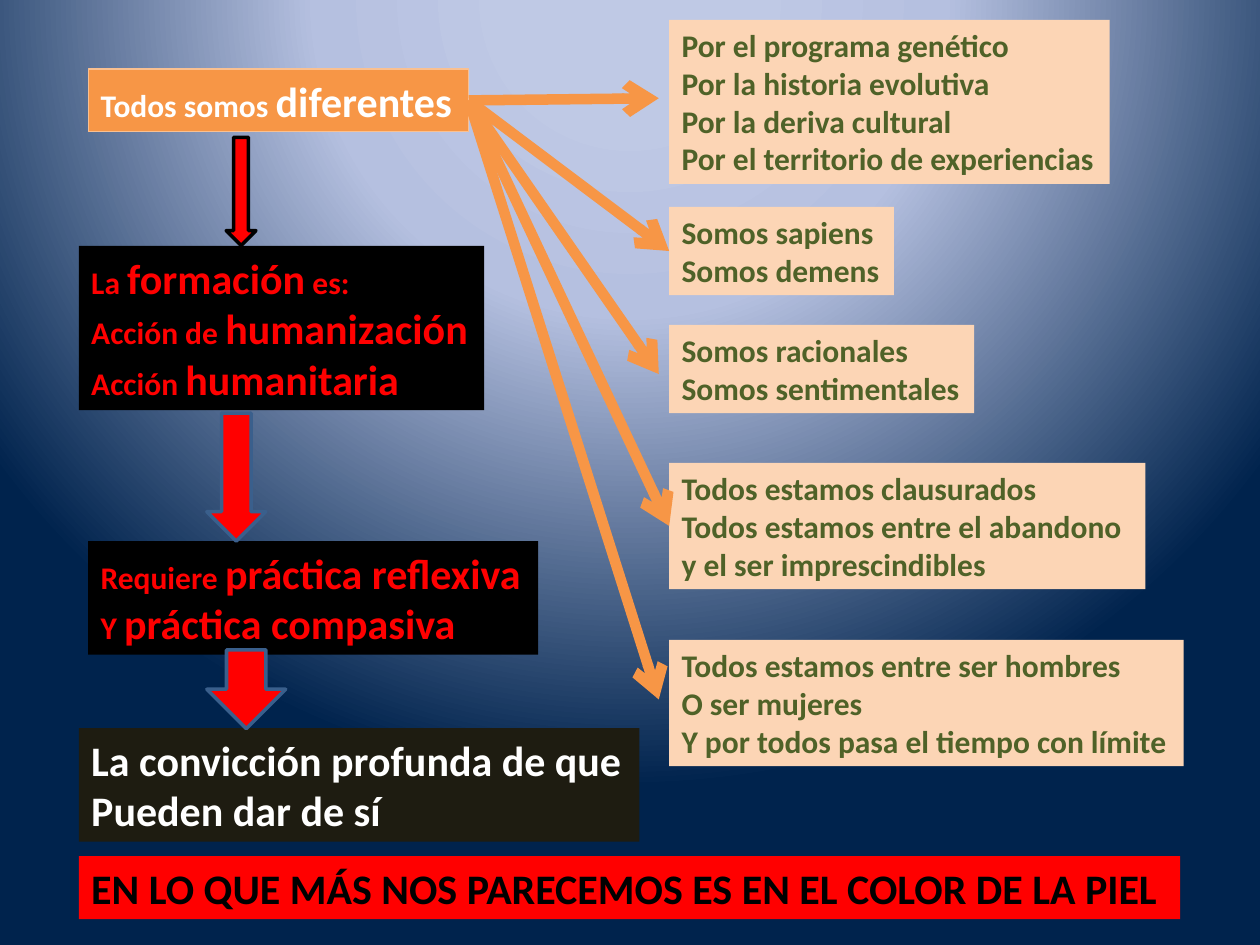
from pptx import Presentation
from pptx.dml.color import RGBColor
from pptx.enum.dml import MSO_FILL
from pptx.enum.shapes import MSO_CONNECTOR, MSO_SHAPE
from pptx.enum.text import MSO_AUTO_SIZE
from pptx.oxml import parse_xml
from pptx.oxml.ns import nsdecls
from pptx.util import Cm, Pt

STRAIGHT = MSO_CONNECTOR.STRAIGHT
DOWN_ARROW = MSO_SHAPE.DOWN_ARROW
NO_RESIZE = MSO_AUTO_SIZE.NONE
LEFT_SIDE, RIGHT_SIDE = 1, 3

COLORS = {
    "orange": "F79646", "orange_edge": "FAC090", "peach": "FCD5B5",
    "olive": "4F6228", "red": "FF0000", "black": "000000",
    "charcoal": "1E1C11", "white": "FFFFFF", "blue_edge": "3A5F8C",
    "glow": "BFC9E5", "mist": "B5C0E0", "navy": "00234D",
}
SMALL, LARGE = 18, 24


def rgb(name):
    return RGBColor.from_string(COLORS[name])


class SlideBuilder:
    """Holds the style and the current slide."""

    font_name = "Calibri"
    inset = 0.25
    line_height = 0.0425  # cm per point of text size

    def __init__(self, deck):
        self.slide = deck.slides.add_slide(deck.slide_layouts[6])

    def background(self):
        fill = self.slide.background.fill
        fill.solid()
        properties = self.slide.element.xpath(".//p:bgPr")[0]
        properties.replace(properties[0], parse_xml(
            f'<a:gradFill {nsdecls("a")} rotWithShape="1"><a:gsLst>'
            f'<a:gs pos="14000"><a:srgbClr val="{COLORS["glow"]}"><a:alpha val="84000"/></a:srgbClr></a:gs>'
            f'<a:gs pos="40000"><a:srgbClr val="{COLORS["mist"]}"/></a:gs>'
            f'<a:gs pos="100000"><a:srgbClr val="{COLORS["navy"]}"/></a:gs></a:gsLst>'
            '<a:path path="circle"><a:fillToRect l="50000" t="-80000" r="50000" b="180000"/></a:path>'
            '</a:gradFill>'))

    def outline(self, shape, color, width):
        shape.line.color.rgb = rgb(color)
        shape.line.width = Pt(width)

    def text_box(self, left, top, width, lines, fill, color, size=LARGE):
        """Fill a box with lines; an asterisk switches from small to large text."""
        height = self.inset + self.line_height * size * len(lines)
        box = self.slide.shapes.add_textbox(Cm(left), Cm(top), Cm(width), Cm(height))
        box.fill.solid()
        box.fill.fore_color.rgb = rgb(fill)
        frame = box.text_frame
        frame.word_wrap = True
        frame.auto_size = NO_RESIZE
        for number, line in enumerate(lines):
            para = frame.paragraphs[0] if number == 0 else frame.add_paragraph()
            parts = line.split("*")
            for index, part in enumerate(parts):
                if len(parts) == 1:
                    span_size = size
                else:
                    span_size = LARGE if index % 2 else SMALL
                span = para.add_run()
                span.text = part
                span.font.color.rgb = rgb(color)
                formats = {"name": self.font_name, "size": Pt(span_size), "bold": True}
                for name, value in formats.items():
                    setattr(span.font, name, value)
        return box

    def down_arrow(self, left, top, width, height, edge):
        arrow = self.slide.shapes.add_shape(
            DOWN_ARROW, Cm(left), Cm(top), Cm(width), Cm(height))
        arrow.shadow.inherit = False
        arrow.fill.solid()
        arrow.fill.fore_color.rgb = rgb("red")
        self.outline(arrow, edge, 2)

    def arrow_from(self, source, end, target=None):
        """Draw an arrow from the right side of source to a point or a box."""
        arrow = self.slide.shapes.add_connector(
            STRAIGHT, source.left + source.width, source.top + source.height // 2,
            Cm(end[0]), Cm(end[1]))
        arrow.begin_connect(source, RIGHT_SIDE)
        if target is not None:
            arrow.end_connect(target, LEFT_SIDE)
        self.outline(arrow, "orange", 6)
        properties = arrow.element.spPr
        properties.xpath("a:ln")[0].append(
            parse_xml(f'<a:tailEnd {nsdecls("a")} type="arrow"/>'))
        properties.append(parse_xml(f'<a:effectLst {nsdecls("a")}/>'))


def main():
    deck = Presentation()
    deck.slide_width, deck.slide_height = Cm(25.4), Cm(19.05)
    builder = SlideBuilder(deck)
    builder.background()

    # Starting statement
    start = builder.text_box(1.78, 1.39, 7.67, ["Todos somos *diferentes"], "orange", "white")
    builder.outline(start, "orange_edge", 0.75)

    # Reasons on the right: top, width, arrow end, joined to the box, lines
    reasons_left = 13.49
    reasons = [
        (0.4, 8.88, (13.28, 1.98), False,
         ["Por el programa genético", "Por la historia evolutiva",
          "Por la deriva cultural", "Por el territorio de experiencias"]),
        (4.17, 4.53, (13.49, 5.05), True, ["Somos sapiens", "Somos demens"]),
        (6.55, 6.15, (13.28, 7.54), False, ["Somos racionales", "Somos sentimentales"]),
        (9.33, 9.6, (13.49, 10.6), True,
         ["Todos estamos clausurados", "Todos estamos entre el abandono",
          "y el ser imprescindibles"]),
        (12.9, 10.37, (13.28, 14.1), False,
         ["Todos estamos entre ser hombres", "O ser mujeres",
          "Y por todos pasa el tiempo con límite"]),
    ]
    for top, width, end, joined, lines in reasons:
        box = builder.text_box(reasons_left, top, width, lines, "peach", "olive", SMALL)
        builder.arrow_from(start, end, box if joined else None)

    # Chain of consequences on the left
    builder.text_box(1.59, 4.96, 8.17,
                     ["La *formación* es:", "Acción de *humanización", "Acción *humanitaria"],
                     "black", "red")
    builder.text_box(1.78, 10.91, 9.07,
                     ["Requiere *práctica reflexiva", "Y *práctica compasiva"],
                     "black", "red")
    builder.text_box(1.59, 14.68, 11.3,
                     ["La convicción profunda de que", "Pueden dar de sí"],
                     "charcoal", "white")
    builder.down_arrow(4.56, 2.77, 0.6, 2.18, "black")
    builder.down_arrow(4.17, 8.33, 1.19, 2.58, "blue_edge")
    builder.down_arrow(4.17, 13.1, 1.59, 1.59, "blue_edge")

    # Closing statement
    builder.text_box(1.59, 17.26, 22.2,
                     ["EN LO QUE MÁS NOS PARECEMOS ES EN EL COLOR DE LA PIEL"],
                     "red", "black")

    deck.save("out.pptx")


if __name__ == "__main__":
    main()
